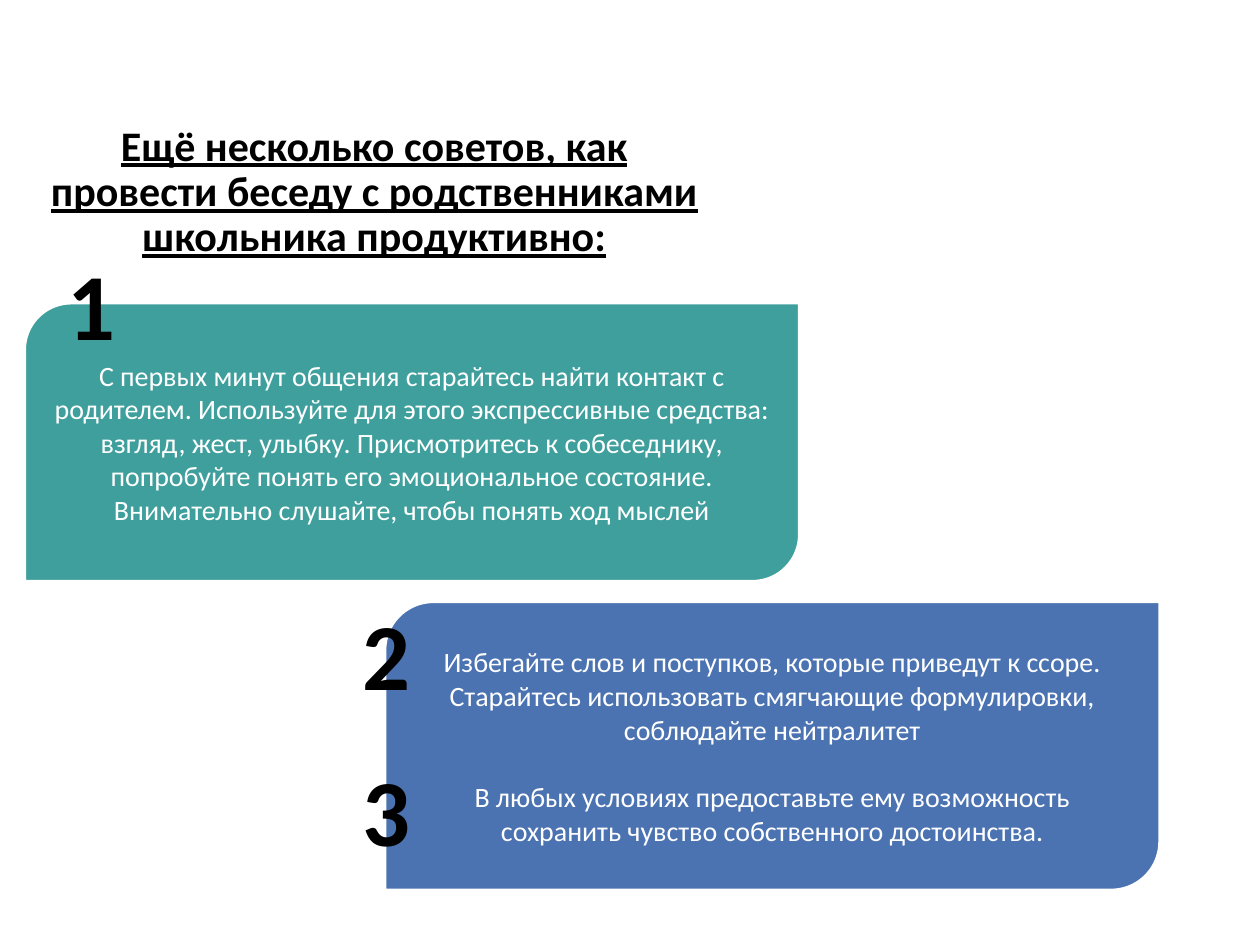
from pptx import Presentation
from pptx.dml.color import RGBColor
from pptx.enum.shapes import MSO_SHAPE
from pptx.enum.text import MSO_ANCHOR, MSO_AUTO_SIZE, PP_ALIGN
from pptx.util import Inches, Pt

BLACK = RGBColor(0x00, 0x00, 0x00)
WHITE = RGBColor(0xFF, 0xFF, 0xFF)
TEAL = RGBColor(0x3F, 0x9F, 0x9D)
BLUE = RGBColor(0x4B, 0x73, 0xB1)

CARDS = [
    (0.2, 2.41, 2.2, TEAL, [
        "С первых минут общения старайтесь найти контакт с родителем. "
        "Используйте для этого экспрессивные средства: взгляд, жест, улыбку. "
        "Присмотритесь к собеседнику, попробуйте понять его эмоциональное "
        "состояние. Внимательно слушайте, чтобы понять ход мыслей",
    ]),
    (3.06, 4.78, 2.28, BLUE, [
        "Избегайте слов и поступков, которые приведут к ссоре. Старайтесь "
        "использовать смягчающие формулировки, соблюдайте нейтралитет",
        "В любых условиях предоставьте ему возможность сохранить чувство "
        "собственного достоинства.",
    ]),
]
NUMBERS = [("1", 0.43, 1.9), ("2", 2.77, 4.68), ("3", 2.77, 5.92)]


def format_paragraph(p, size, color, bold=False):
    p.alignment = PP_ALIGN.CENTER
    p.font.name = "Calibri"
    p.font.size = Pt(size)
    p.font.bold = bold
    p.font.color.rgb = color


prs = Presentation()
prs.slide_width, prs.slide_height = Inches(10), Inches(7.5)
s = prs.slides.add_slide(prs.slide_layouts[5])

title = s.shapes.title
title.left, title.top = Inches(0.2), Inches(0.12)
title.width, title.height = Inches(5.54), Inches(2)
tf = title.text_frame
tf.text = ("Ещё несколько\u00a0советов, как провести беседу "
           "с родственниками школьника продуктивно:")
tf.vertical_anchor = MSO_ANCHOR.BOTTOM
tf.auto_size = MSO_AUTO_SIZE.NONE
p = tf.paragraphs[0]
p.line_spacing = 0.9
format_paragraph(p, 24, BLACK, bold=True)
p.font.underline = True

for left, top, height, color, tips in CARDS:
    sp = s.shapes.add_shape(MSO_SHAPE.ROUND_2_DIAG_RECTANGLE, Inches(left),
                            Inches(top), Inches(6.14), Inches(height))
    sp.shadow.inherit = False
    sp.fill.solid()
    sp.fill.fore_color.rgb = color
    sp.line.color.rgb = WHITE
    sp.line.width = Pt(1)
    tf = sp.text_frame
    tf.word_wrap = True
    tf.vertical_anchor = MSO_ANCHOR.MIDDLE
    tf.text = "\n".join(tips)
    for i, p in enumerate(tf.paragraphs):
        if i:
            p.space_before = Pt(19.5)
        format_paragraph(p, 16, WHITE)

for number, left, top in NUMBERS:
    sp = s.shapes.add_textbox(Inches(left), Inches(top), Inches(0.59), Inches(1.01))
    tf = sp.text_frame
    tf.word_wrap = False
    tf.auto_size = MSO_AUTO_SIZE.SHAPE_TO_FIT_TEXT
    tf.text = number
    format_paragraph(tf.paragraphs[0], 54, BLACK, bold=True)

prs.save("out.pptx")
